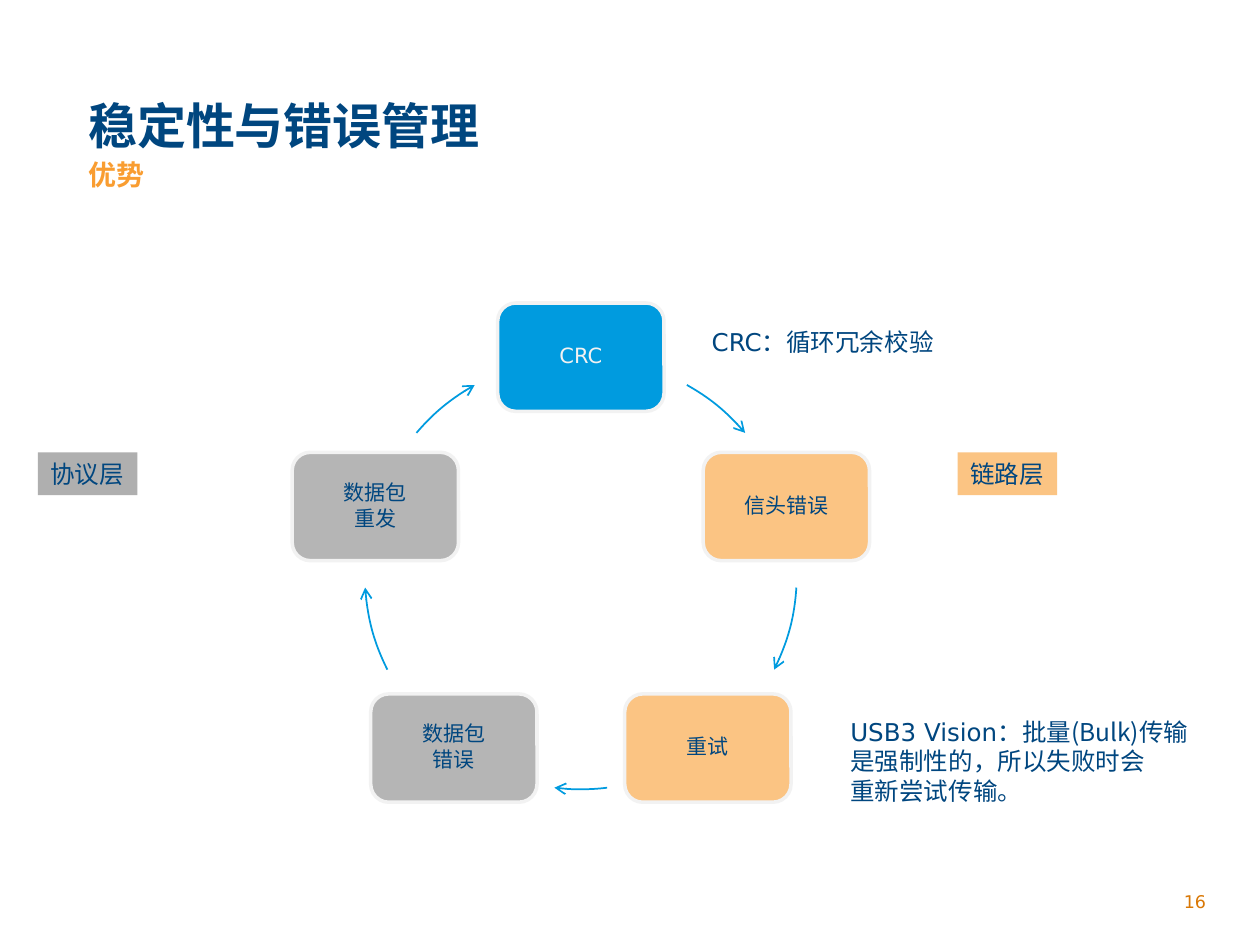
import math

from lxml import etree
from pptx import Presentation
from pptx import util as u
from pptx.dml.color import RGBColor
from pptx.enum import shapes, text
from pptx.oxml.ns import qn

LATIN, CHINESE = "DejaVu Sans", "Noto Sans CJK SC"
NAVY, BLUE, ORANGE, AMBER = "00467F", "009BDF", "F99D31", "D97806"
PEACH, GREY, LABEL_GREY, PALE = "FBC483", "B5B5B5", "AFAFAF", "F2F2F2"
COLUMNS, ROWS = 100, 75


def colour(value):
    return RGBColor.from_string(value)


def assign(target, values):
    for name, value in values.items():
        setattr(target, name, value)


class SlideBuilder:
    def __init__(self, deck):
        self.deck = deck
        self.page = deck.slides.add_slide(deck.slide_layouts[1])

    def place(self, left, top, width, height):
        across, down = self.deck.slide_width / COLUMNS, self.deck.slide_height / ROWS
        return [u.Emu(round(share)) for share in
                (left * across, top * down, width * across, height * down)]

    def fill_text(self, box, paragraphs, size, hue, bold=False, frame=None, layout=None):
        assign(box.text_frame, {"word_wrap": True, **(frame or {})})
        for index, runs in enumerate(paragraphs):
            para = box.text_frame.paragraphs[0] if index == 0 else box.text_frame.add_paragraph()
            assign(para, {"alignment": text.PP_ALIGN.LEFT, **(layout or {})})
            for wording, face in runs:
                span = para.add_run()
                span.text = wording
                assign(span.font, {"size": u.Pt(size), "name": face, "bold": bold})
                span.font.color.rgb = colour(hue)
                etree.SubElement(span._r.get_or_add_rPr(), qn("a:ea"), typeface=CHINESE)

    def heading(self, index, area, wording, size, hue):
        box = self.page.placeholders[index]
        assign(box, dict(zip(("left", "top", "width", "height"), self.place(*area))))
        self.fill_text(box, [[(wording, CHINESE)]], size, hue, bold=True, frame={
            "vertical_anchor": text.MSO_ANCHOR.TOP, "margin_top": 0, "margin_bottom": 0,
            "auto_size": text.MSO_AUTO_SIZE.NONE})
        properties = box.text_frame.paragraphs[0]._p.get_or_add_pPr()
        properties.set("marL", "0")
        properties.set("indent", "0")
        etree.SubElement(properties, qn("a:buNone"))

    def note(self, area, paragraphs, size=14, hue=NAVY, layout=None):
        box = self.page.shapes.add_textbox(*self.place(*area))
        self.fill_text(box, paragraphs, size, hue, layout=layout)

    def block(self, kind, area, fill):
        box = self.page.shapes.add_shape(kind, *self.place(*area))
        box.shadow.inherit = False
        box.fill.solid()
        box.fill.fore_color.rgb = colour(fill)
        return box

    def label(self, area, wording, fill):
        box = self.block(shapes.MSO_SHAPE.RECTANGLE, area, fill)
        box.line.fill.background()
        self.fill_text(box, [[(wording, CHINESE)]], 14, NAVY, frame={
            "word_wrap": False, "vertical_anchor": text.MSO_ANCHOR.TOP})

    def node(self, area, lines, face, fill, hue):
        box = self.block(shapes.MSO_SHAPE.ROUNDED_RECTANGLE, area, fill)
        box.line.color.rgb = colour(PALE)
        box.line.width = u.Pt(2)
        margins = dict.fromkeys(
            ("margin_left", "margin_right", "margin_top", "margin_bottom"), u.Inches(0.09))
        self.fill_text(box, [[(line, face)] for line in lines], 12, hue,
                       frame={"vertical_anchor": text.MSO_ANCHOR.MIDDLE, **margins},
                       layout={"alignment": text.PP_ALIGN.CENTER, "line_spacing": 0.9,
                               "space_after": u.Pt(2)})

    def arc_arrow(self, area, start, end):
        arc = self.page.shapes.add_shape(shapes.MSO_SHAPE.ARC, *self.place(*area))
        arc.shadow.inherit = False
        arc.fill.background()
        arc.line.color.rgb = colour(BLUE)
        arc.line.width = u.Pt(1)
        for index, angle in enumerate((start, end)):
            arc.adjustments[index] = (angle - 90) % 360 * 0.6
        etree.SubElement(arc.line._get_or_add_ln(), qn("a:tailEnd"), type="arrow")

    def cycle(self, centre, radius, node_size, nodes, arcs):
        (x, y), (width, height) = centre, node_size
        ring = (x - radius, y - radius, 2 * radius, 2 * radius)
        for index, (node, arc) in enumerate(zip(nodes, arcs)):
            turn = math.tau * index / len(nodes)
            left = x + radius * math.sin(turn) - width / 2
            top = y - radius * math.cos(turn) - height / 2
            self.node((left, top, width, height), *node)
            self.arc_arrow(ring, *arc)


def main():
    deck = Presentation()
    assign(deck, {"slide_width": u.Inches(10), "slide_height": u.Inches(7.5)})
    slide = SlideBuilder(deck)
    slide.heading(0, (6, 7.6, 88, 4.7), "稳定性与错误管理", 28, NAVY)
    slide.heading(1, (6, 12.5, 88, 5.5), "优势", 16, ORANGE)

    nodes = [
        (["CRC"], LATIN, BLUE, PALE),
        (["信头错误"], CHINESE, PEACH, NAVY),
        (["重试"], CHINESE, PEACH, NAVY),
        (["数据包", "错误"], CHINESE, GREY, NAVY),
        (["数据包", "重发"], CHINESE, GREY, NAVY),
    ]
    right_arcs = [(29.4, 49.5), (93.8, 116.5)]
    left_arcs = [(360 - end, 360 - start) for start, end in reversed(right_arcs)]
    slide.cycle((46.1, 45.5), 17.15, (13.2, 8.6), nodes,
                right_arcs + [(173, 187)] + left_arcs)

    slide.label((3, 35.9, 7.9, 3.4), "协议层", LABEL_GREY)
    slide.label((76, 35.9, 7.9, 3.4), "链路层", PEACH)
    slide.note((55.5, 25.5, 19.9, 3.4), [[("CRC：", LATIN), ("循环冗余校验", CHINESE)]])
    slide.note((66.5, 56.4, 29.1, 8.1), [
        [("USB3 Vision：", LATIN), ("批量(Bulk)传输是强制性的，所以失败时会", CHINESE)],
        [("重新尝试传输。", CHINESE)],
    ])
    slide.note((79.6, 70.2, 17.1, 2.7), [[("16", LATIN)]], 10, AMBER,
               {"alignment": text.PP_ALIGN.RIGHT})
    deck.save("out.pptx")


if __name__ == "__main__":
    main()
